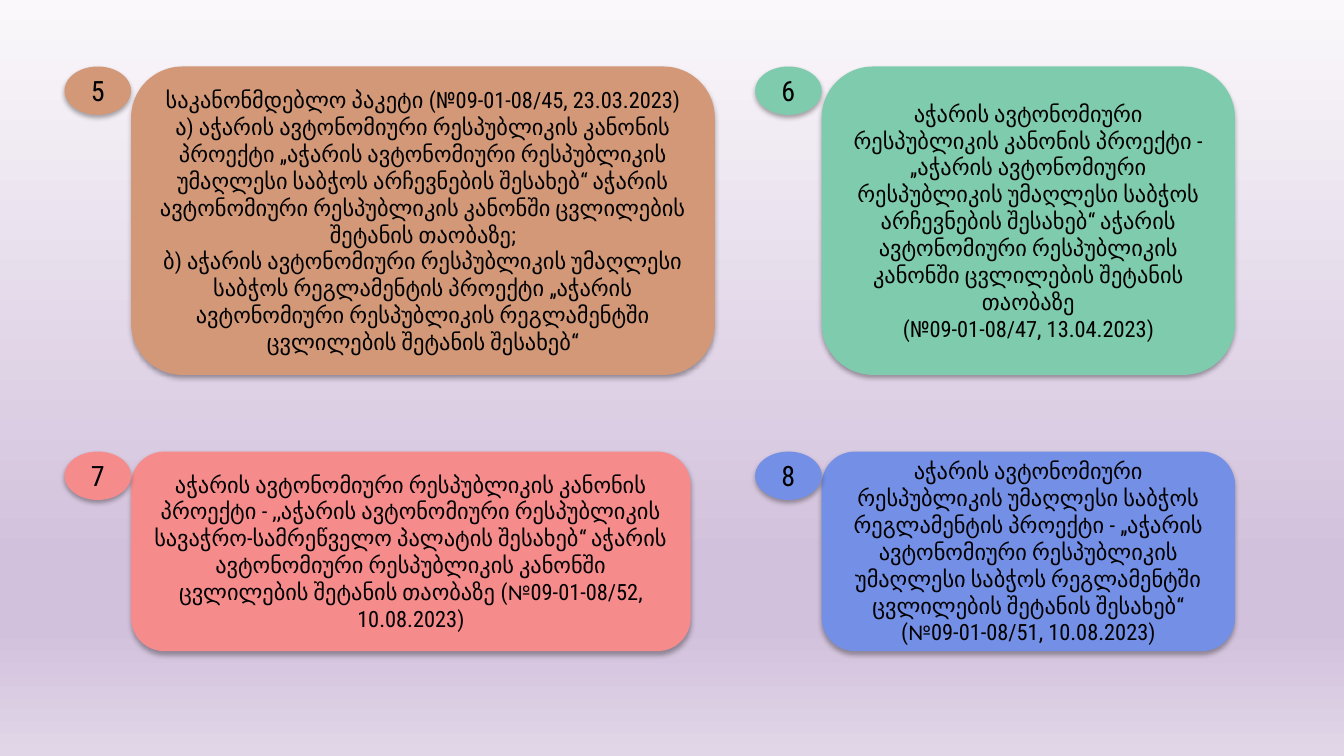
from dataclasses import dataclass

from lxml.etree import SubElement
from pptx import Presentation
from pptx.dml.color import RGBColor
from pptx.enum.shapes import MSO_SHAPE as Preset
from pptx.enum.text import MSO_ANCHOR as Anchor, PP_ALIGN as Align
from pptx.oxml.ns import qn
from pptx.shapes.autoshape import Shape
from pptx.slide import Slide
from pptx.util import Emu, Pt

PX = 9144
BODY_FONT = "Roboto Condensed"
SIGN_FONT = "Calibri"
COLOURS = {
    "text": "000000",
    "shadow": "000000",
    "sand": "D29878",
    "mint": "7FCBAE",
    "coral": "F68B8C",
    "blue": "748FE6",
    "sky_top": "FAF8FB",
    "sky_low": "D2C1DC",
    "sky_end": "E1D6E8",
}
SKY_STOPS = [(0, "sky_top"), (74, "sky_low"), (83, "sky_low"), (100, "sky_end")]
BADGE_WIDTH, BADGE_HEIGHT = 66, 48
LEFT_COLUMN, RIGHT_COLUMN = 64, 749
TOP_ROW, BOTTOM_ROW = 66, 448


@dataclass(frozen=True)
class Span:
    text: str
    font: str = BODY_FONT


@dataclass(frozen=True)
class Bill:
    number: int
    left: int
    top: int
    width: int
    height: int
    colour: str
    paragraphs: list[list[Span]]


BILLS = [
    Bill(5, LEFT_COLUMN, TOP_ROW, 579, 306, "sand", [
        [Span("საკანონმდებლო პაკეტი (№09-01-08/45, 23.03.2023)")],
        [Span("ა) აჭარის ავტონომიური რესპუბლიკის კანონის პროექტი "
              "„აჭარის ავტონომიური რესპუბლიკის უმაღლესი საბჭოს არჩევნების შესახებ“ "
              "აჭარის ავტონომიური რესპუბლიკის კანონში ცვლილების შეტანის თაობაზე;")],
        [Span("ბ) აჭარის ავტონომიური რესპუბლიკის უმაღლესი საბჭოს რეგლამენტის პროექტი "
              "„აჭარის ავტონომიური რესპუბლიკის რეგლამენტში ცვლილების შეტანის შესახებ“")],
    ]),
    Bill(6, RIGHT_COLUMN, TOP_ROW, 410, 306, "mint", [
        [Span("აჭარის ავტონომიური რესპუბლიკის კანონის პროექტი - "
              "„აჭარის ავტონომიური რესპუბლიკის უმაღლესი საბჭოს არჩევნების შესახებ“ "
              "აჭარის ავტონომიური რესპუბლიკის კანონში ცვლილების შეტანის თაობაზე")],
        [Span("(№09-01-08/47, 13.04.2023)")],
    ]),
    Bill(7, LEFT_COLUMN, BOTTOM_ROW, 555, 198, "coral", [
        [Span("აჭარის ავტონომიური რესპუბლიკის კანონის პროექტი - "
              ",,აჭარის ავტონომიური რესპუბლიკის სავაჭრო-სამრეწველო პალატის შესახებ“ "
              "აჭარის ავტონომიური რესპუბლიკის კანონში ცვლილების შეტანის თაობაზე ("),
         Span("№", SIGN_FONT),
         Span("09-01-08/52, 10.08.2023)")],
    ]),
    Bill(8, RIGHT_COLUMN, BOTTOM_ROW, 410, 198, "blue", [
        [Span("აჭარის ავტონომიური რესპუბლიკის უმაღლესი საბჭოს რეგლამენტის პროექტი - "
              "„აჭარის ავტონომიური რესპუბლიკის უმაღლესი საბჭოს რეგლამენტში "
              "ცვლილების შეტანის შესახებ“")],
        [Span("("), Span("№", SIGN_FONT), Span("09-01-08/51, 10.08.2023)")],
    ]),
]


def rgb(colour: str) -> RGBColor:
    return RGBColor.from_string(COLOURS[colour])


def paint_sky(slide: Slide) -> None:
    sky = slide.background.fill
    sky.gradient()
    sky.gradient_angle = 270
    stops = slide.element.find(".//" + qn("a:gsLst"))
    for stop in list(stops):
        stops.remove(stop)
    for percent, colour in SKY_STOPS:
        stop = SubElement(stops, qn("a:gs"), pos=str(percent * 1000))
        SubElement(stop, qn("a:srgbClr"), val=COLOURS[colour])


def cast_shadow(shape: Shape) -> None:
    shape.shadow.inherit = False
    effects = shape.element.spPr.find(qn("a:effectLst"))
    shadow = SubElement(effects, qn("a:outerShdw"), blurRad=str(Pt(3.5)),
                        dist=str(Pt(2.2)), dir="5400000", rotWithShape="0")
    shade = SubElement(shadow, qn("a:srgbClr"), val=COLOURS["shadow"])
    SubElement(shade, qn("a:alpha"), val="32000")


def add_bubble(slide: Slide, preset: Preset, box: tuple[int, int, int, int],
               colour: str, paragraphs: list[list[Span]], size: int) -> None:
    bubble = slide.shapes.add_shape(preset, *(Emu(px * PX) for px in box))
    bubble.fill.solid()
    bubble.fill.fore_color.rgb = rgb(colour)
    bubble.line.fill.background()
    cast_shadow(bubble)
    frame = bubble.text_frame
    frame.word_wrap = True
    frame.vertical_anchor = Anchor.MIDDLE
    for index, spans in enumerate(paragraphs):
        paragraph = frame.add_paragraph() if index else frame.paragraphs[0]
        paragraph.alignment = Align.CENTER
        for span in spans:
            run = paragraph.add_run()
            run.text = span.text
            run.font.name = span.font
            run.font.size = Pt(size)
            run.font.color.rgb = rgb("text")


def add_bill(slide: Slide, bill: Bill) -> None:
    card = (bill.left + BADGE_WIDTH, bill.top, bill.width, bill.height)
    badge = (bill.left, bill.top, BADGE_WIDTH, BADGE_HEIGHT)
    add_bubble(slide, Preset.ROUNDED_RECTANGLE, card, bill.colour, bill.paragraphs, 16)
    add_bubble(slide, Preset.OVAL, badge, bill.colour, [[Span(str(bill.number))]], 20)


def main() -> None:
    deck = Presentation()
    deck.slide_width = Emu(1333 * PX)
    deck.slide_height = Emu(750 * PX)
    slide = deck.slides.add_slide(deck.slide_layouts[6])
    paint_sky(slide)
    for bill in BILLS:
        add_bill(slide, bill)
    deck.save("out.pptx")


if __name__ == "__main__":
    main()
